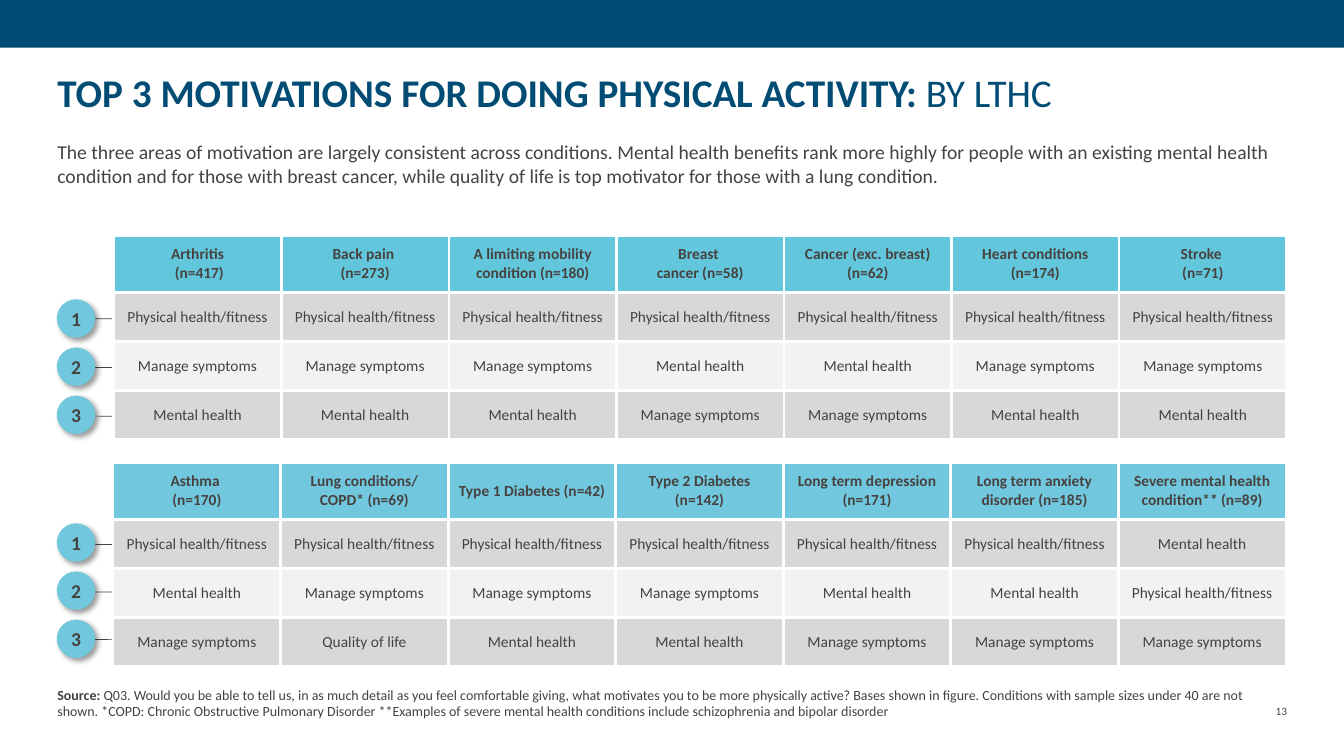
from dataclasses import dataclass

from lxml import etree
from pptx import Presentation
from pptx import util as u
from pptx.dml.color import RGBColor
from pptx.enum import shapes, text
from pptx.oxml import ns

Pt = u.Pt
FONT = "Calibri"
NAVY = RGBColor(0x00, 0x4C, 0x74)
INK = RGBColor(0x45, 0x43, 0x41)
TABLE_INK = RGBColor(0x46, 0x42, 0x40)
AQUA = RGBColor(0x62, 0xC7, 0xDC)
SKY = RGBColor(0x71, 0xC7, 0xDE)
GREY = RGBColor(0xD8, 0xD8, 0xD8)
PALE = RGBColor(0xF2, 0xF2, 0xF2)
WHITE = RGBColor(0xFF, 0xFF, 0xFF)

COLUMN_WIDTH = 119.7
HEADER_HEIGHT = 40.4
ROW_HEIGHT = 35.1
BADGE_LEFT = 40.6
BADGE_SIZE = 27.4
BADGE_STEP = 34.4

FITNESS = "Physical health/fitness"
SYMPTOMS = "Manage symptoms"
MENTAL = "Mental health"
QUALITY = "Quality of life"


@dataclass(frozen=True)
class Condition:
    label: str
    motivations: tuple[str, str, str]


@dataclass(frozen=True)
class Ranking:
    left: float
    top: float
    header_fill: RGBColor
    badge_top: float
    leader_top: float
    leader_step: float
    conditions: tuple[Condition, ...]


RANKINGS = (
    Ranking(81.3, 168.5, AQUA, 213.8, 227.6, 34.8, (
        Condition("Arthritis\n (n=417)", (FITNESS, SYMPTOMS, MENTAL)),
        Condition("Back pain \n(n=273)", (FITNESS, SYMPTOMS, MENTAL)),
        Condition("A limiting mobility condition (n=180)", (FITNESS, SYMPTOMS, MENTAL)),
        Condition("Breast \ncancer (n=58)", (FITNESS, MENTAL, SYMPTOMS)),
        Condition("Cancer (exc. breast) (n=62)", (FITNESS, MENTAL, SYMPTOMS)),
        Condition("Heart conditions (n=174)", (FITNESS, SYMPTOMS, MENTAL)),
        Condition("Stroke \n(n=71)", (FITNESS, SYMPTOMS, MENTAL)),
    )),
    Ranking(80.8, 330.5, SKY, 373.8, 388.8, 34, (
        Condition("Asthma \n(n=170)", (FITNESS, MENTAL, SYMPTOMS)),
        Condition("Lung conditions/ COPD* (n=69)", (FITNESS, SYMPTOMS, QUALITY)),
        Condition("Type 1 Diabetes (n=42)", (FITNESS, SYMPTOMS, MENTAL)),
        Condition("Type 2 Diabetes (n=142)", (FITNESS, SYMPTOMS, MENTAL)),
        Condition("Long term depression (n=171)", (FITNESS, MENTAL, SYMPTOMS)),
        Condition("Long term anxiety disorder (n=185)", (FITNESS, MENTAL, SYMPTOMS)),
        Condition("Severe mental health condition** (n=89)", (MENTAL, FITNESS, SYMPTOMS)),
    )),
)


def write(frame, *, bold: str = "", plain: str = "", size: float, color: RGBColor = INK,
          align=text.PP_ALIGN.LEFT, before: float = 0, after: float = 0) -> None:
    paragraph = frame.paragraphs[0]
    paragraph.alignment = align
    paragraph.space_before = Pt(before)
    paragraph.space_after = Pt(after)
    for words, is_bold in ((bold, True), (plain, False)):
        if not words:
            continue
        for index, line in enumerate(words.split("\n")):
            if index:
                paragraph.add_line_break()
            run = paragraph.add_run()
            run.text = line
            run.font.name = FONT
            run.font.size = Pt(size)
            run.font.bold = is_bold
            run.font.color.rgb = color


def clear_insets(frame, anchor) -> None:
    frame.margin_left = frame.margin_right = frame.margin_top = frame.margin_bottom = 0
    frame.word_wrap = True
    frame.vertical_anchor = anchor


def add_text(slide, left: float, top: float, width: float, height: float,
             anchor=text.MSO_ANCHOR.TOP, **style) -> None:
    frame = slide.shapes.add_textbox(Pt(left), Pt(top), Pt(width), Pt(height)).text_frame
    clear_insets(frame, anchor)
    write(frame, **style)


def add_filled(slide, kind, left: float, top: float, width: float, height: float,
               fill: RGBColor):
    shape = slide.shapes.add_shape(kind, Pt(left), Pt(top), Pt(width), Pt(height))
    shape.shadow.inherit = False
    shape.fill.solid()
    shape.fill.fore_color.rgb = fill
    shape.line.fill.background()
    return shape


def add_color(parent, color: RGBColor):
    return etree.SubElement(parent, ns.qn("a:srgbClr"), val=str(color))


def add_leader(slide, top: float) -> None:
    leader = slide.shapes.add_connector(
        shapes.MSO_CONNECTOR.STRAIGHT, Pt(57), Pt(top), Pt(633.6), Pt(top + 2.5))
    leader.line.color.rgb = TABLE_INK
    leader.line.width = Pt(0.5)
    etree.SubElement(leader._element.spPr, ns.qn("a:effectLst"))


def add_badge(slide, rank: int, top: float) -> None:
    badge = add_filled(slide, shapes.MSO_SHAPE.OVAL, BADGE_LEFT, top,
                       BADGE_SIZE, BADGE_SIZE, SKY)
    effects = badge._element.spPr.find(ns.qn("a:effectLst"))
    shadow = etree.SubElement(effects, ns.qn("a:outerShdw"), blurRad=str(Pt(4)),
                              dist=str(Pt(3)), dir=str(45 * 60000), algn="tl",
                              rotWithShape="0")
    black = add_color(shadow, RGBColor(0, 0, 0))
    etree.SubElement(black, ns.qn("a:alpha"), val="40000")
    clear_insets(badge.text_frame, text.MSO_ANCHOR.MIDDLE)
    write(badge.text_frame, bold=str(rank), size=14, color=TABLE_INK,
          align=text.PP_ALIGN.CENTER, after=10)


def format_cell(cell, fill: RGBColor, **words: str) -> None:
    properties = cell._tc.get_or_add_tcPr()
    for side in ("lnL", "lnR", "lnT", "lnB"):
        border = etree.SubElement(properties, ns.qn(f"a:{side}"), w=str(Pt(2.25)))
        add_color(etree.SubElement(border, ns.qn("a:solidFill")), WHITE)
    cell.fill.solid()
    cell.fill.fore_color.rgb = fill
    cell.vertical_anchor = text.MSO_ANCHOR.MIDDLE
    write(cell.text_frame, size=11, color=TABLE_INK, align=text.PP_ALIGN.CENTER, **words)


def add_ranking(slide, ranking: Ranking) -> None:
    count = len(ranking.conditions)
    table = slide.shapes.add_table(
        4, count, Pt(ranking.left), Pt(ranking.top),
        Pt(COLUMN_WIDTH * count), Pt(HEADER_HEIGHT + 3 * ROW_HEIGHT)).table
    table.horz_banding = False
    for row, height in zip(table.rows, (HEADER_HEIGHT, *[ROW_HEIGHT] * 3)):
        row.height = Pt(height)
    for column, condition in enumerate(ranking.conditions):
        table.columns[column].width = Pt(COLUMN_WIDTH)
        format_cell(table.cell(0, column), ranking.header_fill, bold=condition.label)
        for rank, motivation in enumerate(condition.motivations, 1):
            format_cell(table.cell(rank, column), GREY if rank % 2 else PALE,
                        plain=motivation)


def main() -> None:
    deck = Presentation()
    deck.slide_width, deck.slide_height = Pt(960), Pt(540)
    slide = deck.slides.add_slide(deck.slide_layouts[6])

    add_text(slide, 891.4, 503.3, 28, 9.4, text.MSO_ANCHOR.BOTTOM,
             plain="13", size=8, align=text.PP_ALIGN.RIGHT)
    add_text(slide, 41, 49, 878.4, 35.3, size=28, color=NAVY,
             bold="TOP 3 MOTIVATIONS FOR DOING PHYSICAL ACTIVITY: ", plain="BY LTHC")
    add_text(slide, 41, 100, 878.4, 34, size=14, before=10,
             plain="The three areas of motivation are largely consistent across conditions. "
                   "Mental health benefits rank more highly for people with an existing mental "
                   "health condition and for those with breast cancer, while quality of life is "
                   "top motivator for those with a lung condition.")
    add_text(slide, 41, 504.7, 849, 9.4, text.MSO_ANCHOR.BOTTOM, size=10, bold="Source: ",
             plain="Q03. Would you be able to tell us, in as much detail as you feel "
                   "comfortable giving, what motivates you to be more physically active? "
                   "Bases shown in figure. Conditions with sample sizes under 40 are not "
                   "shown. *COPD: Chronic Obstructive Pulmonary Disorder **Examples of severe "
                   "mental health conditions include schizophrenia and bipolar disorder")

    for ranking in RANKINGS:
        for index in range(3):
            add_leader(slide, ranking.leader_top + index * ranking.leader_step)
            add_badge(slide, index + 1, ranking.badge_top + index * BADGE_STEP)
        add_ranking(slide, ranking)

    add_filled(slide, shapes.MSO_SHAPE.RECTANGLE, 0, 0, 960, 34, NAVY)
    deck.save("out.pptx")


if __name__ == "__main__":
    main()
